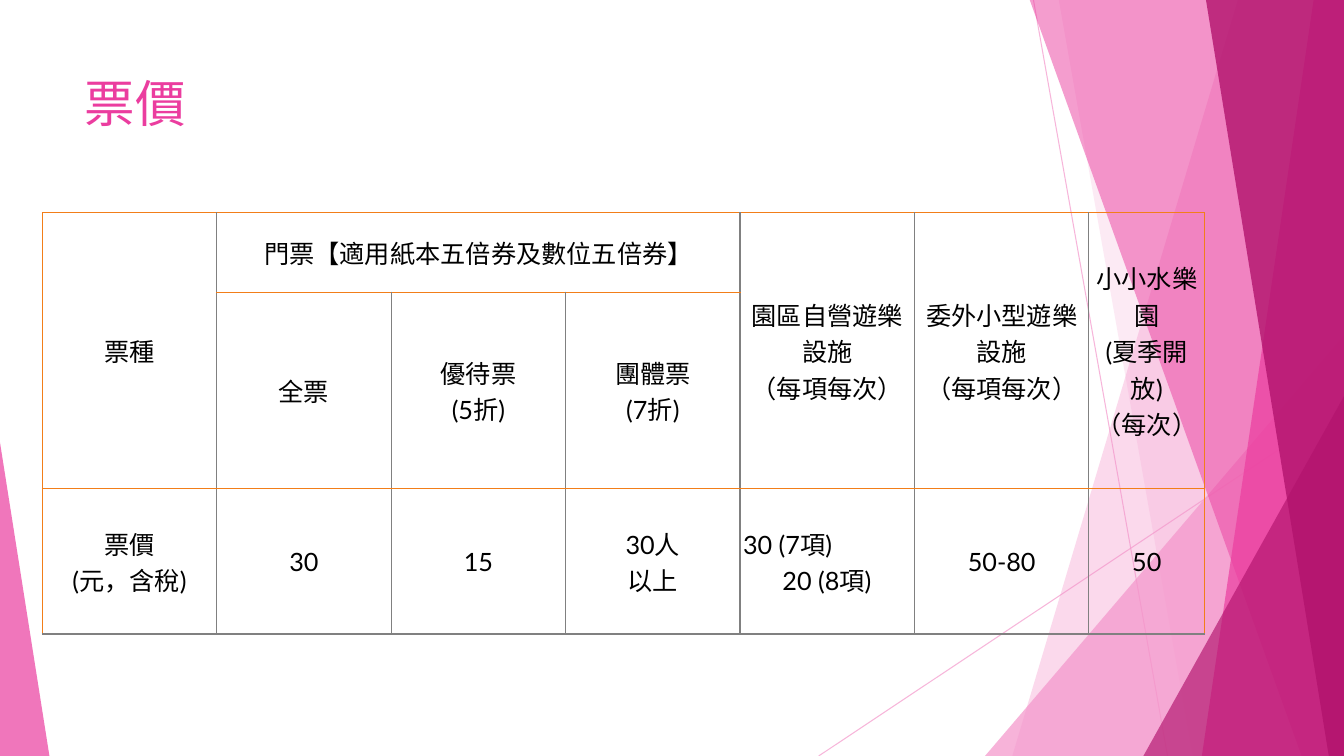
import pptx
import pptx.dml.color
import pptx.enum.shapes
import pptx.enum.text
import pptx.oxml
import pptx.oxml.ns
import pptx.util
from dataclasses import dataclass
from lxml import etree

Inches = pptx.util.Inches
ALIGN = pptx.enum.text.PP_ALIGN
ANCHOR = pptx.enum.text.MSO_ANCHOR
qn = pptx.oxml.ns.qn


@dataclass(frozen=True)
class Theme:
    font: str = "Lato"
    title_size: int = 36
    table_size: int = 18
    pale: str = "F496CB"
    pink: str = "EB3D9F"
    deep: str = "B2136D"
    ink: str = "000000"
    border: str = "F27E19"
    divider: str = "808080"


class Slide:
    def __init__(self, deck, theme):
        self.theme = theme
        self.slide = deck.slides.add_slide(deck.slide_layouts[5])
        self.shapes = self.slide.shapes

    def color(self, value):
        return pptx.dml.color.RGBColor.from_string(value)

    def set_opacity(self, fill_parent, opacity):
        srgb = next(fill_parent.iter(qn("a:srgbClr")))
        etree.SubElement(srgb, qn("a:alpha")).set("val", str(opacity * 1000))

    def paint(self, shape, color, opacity):
        shape.shadow.inherit = False
        shape.line.fill.background()
        shape.fill.solid()
        shape.fill.fore_color.rgb = self.color(color)
        self.set_opacity(shape._element.spPr.find(qn("a:solidFill")), opacity)

    def add_text(self, paragraph, text, size, color, align):
        paragraph.alignment = align
        for number, line in enumerate(text.split("\n")):
            if number:
                paragraph.add_line_break()
            run = paragraph.add_run()
            run.text = line
            run.font.name = self.theme.font
            run.font.size = pptx.util.Pt(size)
            run.font.color.rgb = self.color(color)

    def title(self, text, left, top, width, height):
        heading = self.shapes.title
        heading.left, heading.top = Inches(left), Inches(top)
        heading.width, heading.height = Inches(width), Inches(height)
        heading.text_frame.vertical_anchor = ANCHOR.TOP
        heading.text_frame.word_wrap = True
        self.add_text(heading.text_frame.paragraphs[0], text,
                      self.theme.title_size, self.theme.pink, ALIGN.LEFT)

    def ray(self, start, end):
        line = self.shapes.add_connector(
            pptx.enum.shapes.MSO_CONNECTOR.STRAIGHT,
            *(Inches(value) for value in (*start, *end)))
        line.line.width = pptx.util.Pt(0.75)
        line.line.color.rgb = self.color(self.theme.pale)
        properties = line._element.spPr
        self.set_opacity(properties, 70)
        etree.SubElement(properties, qn("a:effectLst"))

    def shard(self, top_left, bottom_left, color, opacity):
        """A band running from a slanted left edge to the slide's right edge."""
        top, right, bottom = -0.01, 13.33, 7.5
        corners = [(Inches(x), Inches(y)) for x, y in (
            (top_left, top), (right, top), (right, bottom), (bottom_left, bottom))]
        builder = self.shapes.build_freeform(*corners[0], scale=1.0)
        builder.add_line_segments(corners[1:], close=True)
        self.paint(builder.convert_to_shape(), color, opacity)

    def corner(self, left, top, width, height, apex, color, opacity):
        triangle = self.shapes.add_shape(
            pptx.enum.shapes.MSO_SHAPE.ISOSCELES_TRIANGLE,
            Inches(left), Inches(top), Inches(width), Inches(height))
        triangle.adjustments[0] = apex
        self.paint(triangle, color, opacity)

    def edge(self, cell, side, color):
        properties = cell._tc.get_or_add_tcPr()
        line = etree.SubElement(properties, qn("a:" + side), w="12700")
        fill = etree.SubElement(line, qn("a:solidFill"))
        etree.SubElement(fill, qn("a:srgbClr"), val=color)

    def table(self, left, top, widths, heights, rows, merges):
        theme = self.theme
        grid = self.shapes.add_table(
            len(heights), len(widths), Inches(left), Inches(top),
            Inches(sum(widths)), Inches(sum(heights))).table
        grid.first_row = grid.horz_banding = False
        for column, width in zip(grid.columns, widths):
            column.width = Inches(width)
        for row, height in zip(grid.rows, heights):
            row.height = Inches(height)
        for first, last in merges:
            grid.cell(*first).merge(grid.cell(*last))

        last_row, last_column = len(heights) - 1, len(widths) - 1
        for r, row in enumerate(rows):
            for c, text in enumerate(row):
                cell = grid.cell(r, c)
                cell.margin_left = cell.margin_right = Inches(0.03)
                cell.margin_top = cell.margin_bottom = Inches(0.03)
                cell.vertical_anchor = ANCHOR.MIDDLE
                # Borders come before the fill in the cell properties
                self.edge(cell, "lnL", theme.divider if c else theme.border)
                if c == last_column:
                    self.edge(cell, "lnR", theme.border)
                self.edge(cell, "lnT", theme.border)
                if r == last_row:
                    self.edge(cell, "lnB", theme.divider)
                cell.fill.background()
                if text:
                    self.add_text(cell.text_frame.paragraphs[0], text,
                                  theme.table_size, theme.ink, ALIGN.CENTER)
        return grid

    def stepped_prices(self, cell, prices, indent):
        """Left-aligned prices, each set in further than the one above."""
        frame = cell.text_frame
        for step, price in enumerate(prices):
            paragraph = frame.add_paragraph() if step else frame.paragraphs[0]
            self.add_text(paragraph, price, self.theme.table_size,
                          self.theme.ink, ALIGN.LEFT)
            paragraph._p.get_or_add_pPr().set("marL", str(Inches(indent * step)))


def main():
    deck = pptx.Presentation()
    deck.slide_width, deck.slide_height = Inches(13.33), Inches(7.5)
    theme = Theme()
    page = Slide(deck, theme)

    # Background facets
    page.ray((10.25, 0), (11.58, 7.5))
    page.ray((13.33, 4.03), (8.12, 7.5))
    page.shard(12.28, 10.04, theme.pale, 36)
    page.shard(10.5, 11.83, theme.pale, 20)
    page.corner(9.77, 3.33, 3.56, 4.17, 1, theme.pale, 72)
    page.shard(10.21, 12.91, theme.pink, 50)
    page.shard(13.03, 11.92, theme.pink, 70)
    page.shard(11.96, 13.18, theme.deep, 80)
    page.corner(11.34, 3.93, 1.99, 3.57, 1, theme.deep, 66)
    page.corner(0, 4.39, 0.49, 3.11, 0, theme.pink, 70)

    # Title
    page.title("票價", 0.74, 0.67, 9.4, 1.44)

    # Ticket prices
    ticket_rows = [
        ["票種", "門票【適用紙本五倍券及數位五倍券】", "", "",
         "園區自營遊樂設施\n（每項每次）", "委外小型遊樂設施\n（每項每次）",
         "小小水樂園\n(夏季開放)\n（每次）"],
        ["", "全票", "優待票\n(5折)", "團體票\n(7折)", "", "", ""],
        ["票價\n(元，含稅)", "30", "15", "30人\n以上", "", "50-80", "50"],
    ]
    merges = [((0, 1), (0, 3))] + [((0, c), (1, c)) for c in (0, 4, 5, 6)]
    prices = page.table(0.42, 2.11, [1.73] * 6 + [1.15], [0.79, 1.95, 1.44],
                        ticket_rows, merges)
    page.stepped_prices(prices.cell(2, 4), ["30 (7項)", "20 (8項)"], 0.39)

    deck.save("out.pptx")


if __name__ == "__main__":
    main()
